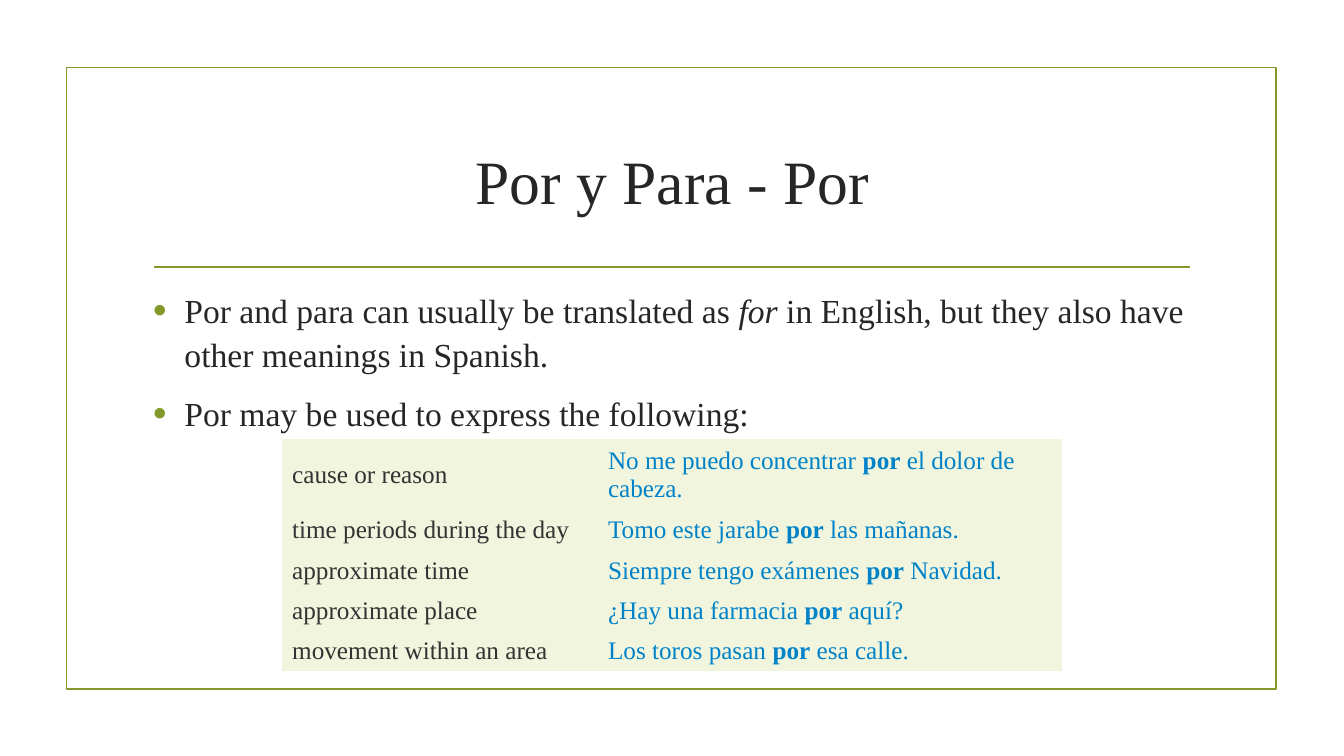
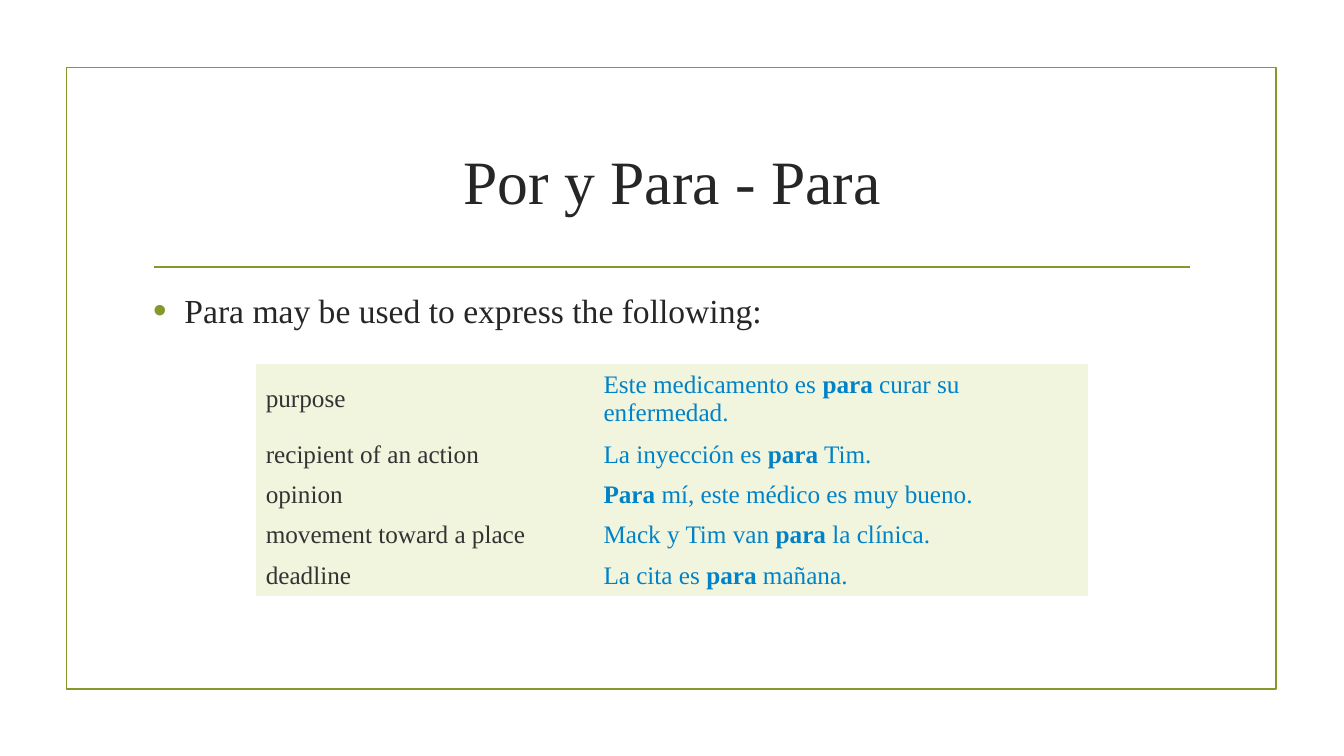
from lxml import etree
from pptx import Presentation
from pptx.dml.color import RGBColor
from pptx.enum import shapes, text
from pptx.oxml.ns import qn
from pptx.util import Cm, Pt

# Content: text between bars is emphasised
LESSONS = [
    {
        "title": "Por y Para - Por",
        "points": [
            "Por and para can usually be translated as |for| in English, "
            "but they also have other meanings in Spanish.",
            "Por may be used to express the following:",
        ],
        "uses": [
            ("cause or reason", "No me puedo concentrar |por| el dolor de cabeza."),
            ("time periods during the day", "Tomo este jarabe |por| las mañanas."),
            ("approximate time", "Siempre tengo exámenes |por| Navidad."),
            ("approximate place", "¿Hay una farmacia |por| aquí?"),
            ("movement within an area", "Los toros pasan |por| esa calle."),
        ],
        "table_top": 11.07,
        "columns": (7.96, 11.69),
    },
    {
        "title": "Por y Para - Para",
        "points": ["Para may be used to express the following:"],
        "uses": [
            ("purpose", "Este medicamento es |para| curar su enfermedad."),
            ("recipient of an action", "La inyección es |para| Tim."),
            ("opinion", "|Para| mí, este médico es muy bueno."),
            ("movement toward a place", "Mack y Tim van |para| la clínica."),
            ("deadline", "La cita es |para| mañana."),
        ],
        "table_top": 9.17,
        "columns": (8.51, 12.47),
    },
]

# Shared look
COLORS = {"olive": "83992A", "ink": "262626", "use": "333333",
          "example": "0082C9", "cell": "F1F5DD"}
FONT = "Times New Roman"
SLIDE_W, SLIDE_H = 33.87, 19.05
FRAME = (1.68, 1.7, 30.48, 15.67)
RULE = (3.89, 6.73, 30, 6.73)
TITLE = (3.61, 2.72, 26.67, 3.63)
BODY = (3.61, 7.11, 26.67, 9.22)
FIRST_ROW, OTHER_ROW = 1.66, 0.96
BULLET_INDENT = Cm(0.79)
PLAIN_TABLE = "{2D5ABB26-0587-4C30-8999-92F81FD0307C}"
TITLE_FORMAT = {"alignment": text.PP_ALIGN.CENTER}
POINT_FORMAT = {"line_spacing": 1.08, "space_after": Pt(6)}


def color(name):
    return RGBColor.from_string(COLORS[name])


def cms(lengths):
    return [Cm(length) for length in lengths]


def write(paragraph, content, size, ink, emphasis="bold"):
    """Add the text, emphasising the parts between bars."""
    for i, part in enumerate(content.split("|")):
        if not part:
            continue
        run = paragraph.add_run()
        run.text = part
        for key, value in {"name": FONT, "size": Pt(size), emphasis: i % 2 == 1}.items():
            setattr(run.font, key, value)
        run.font.color.rgb = color(ink)


def arrange(paragraph, formats):
    for key, value in formats.items():
        setattr(paragraph, key, value)


def add_bullet(paragraph):
    props = paragraph._p.get_or_add_pPr()
    props.set("marL", str(BULLET_INDENT))
    props.set("indent", str(-BULLET_INDENT))
    tint = etree.SubElement(props, qn("a:buClr"))
    etree.SubElement(tint, qn("a:srgbClr"), val=COLORS["olive"])
    etree.SubElement(props, qn("a:buSzPct"), val="115000")
    etree.SubElement(props, qn("a:buFont"), typeface="Arial")
    etree.SubElement(props, qn("a:buChar"), char="•")


def add_text_frame(slide, box, anchor):
    frame = slide.shapes.add_textbox(*cms(box)).text_frame
    frame.word_wrap = True
    frame.vertical_anchor = anchor
    return frame


def add_border(slide):
    border = slide.shapes.add_shape(shapes.MSO_SHAPE.RECTANGLE, *cms(FRAME))
    border.shadow.inherit = False
    border.fill.background()
    rule = slide.shapes.add_connector(shapes.MSO_CONNECTOR.STRAIGHT, *cms(RULE))
    etree.SubElement(rule._element.spPr, qn("a:effectLst"))
    for outline in (border.line, rule.line):
        outline.color.rgb = color("olive")
        outline.width = Pt(1.25)


def add_title(slide, title):
    heading = add_text_frame(slide, TITLE, text.MSO_ANCHOR.MIDDLE).paragraphs[0]
    arrange(heading, TITLE_FORMAT)
    write(heading, title, 44, "ink")


def add_points(slide, points):
    body = add_text_frame(slide, BODY, text.MSO_ANCHOR.TOP)
    for i, point in enumerate(points):
        paragraph = body.add_paragraph() if i else body.paragraphs[0]
        arrange(paragraph, POINT_FORMAT)
        if i:
            paragraph.space_before = Pt(5.3)
        add_bullet(paragraph)
        write(paragraph, point, 24, "ink", "italic")


def add_uses(slide, uses, top, columns):
    width = sum(columns)
    heights = [FIRST_ROW] + [OTHER_ROW] * (len(uses) - 1)
    box = ((SLIDE_W - width) / 2, top, width, sum(heights))
    table = slide.shapes.add_table(len(uses), len(columns), *cms(box)).table
    table.first_row = table.horz_banding = False
    table._tbl.tblPr.find(qn("a:tableStyleId")).text = PLAIN_TABLE
    for column, column_width in zip(table.columns, columns):
        column.width = Cm(column_width)
    for row, height, use in zip(table.rows, heights, uses):
        row.height = Cm(height)
        for cell, content, ink in zip(row.cells, use, ("use", "example")):
            cell.fill.solid()
            cell.fill.fore_color.rgb = color("cell")
            cell.vertical_anchor = text.MSO_ANCHOR.MIDDLE
            write(cell.text_frame.paragraphs[0], content, 18, ink)


def main():
    deck = Presentation()
    deck.slide_width, deck.slide_height = cms((SLIDE_W, SLIDE_H))
    for lesson in LESSONS:
        slide = deck.slides.add_slide(deck.slide_layouts[6])
        add_border(slide)
        add_title(slide, lesson["title"])
        add_points(slide, lesson["points"])
        add_uses(slide, lesson["uses"], lesson["table_top"], lesson["columns"])
    deck.save("out.pptx")


if __name__ == "__main__":
    main()
